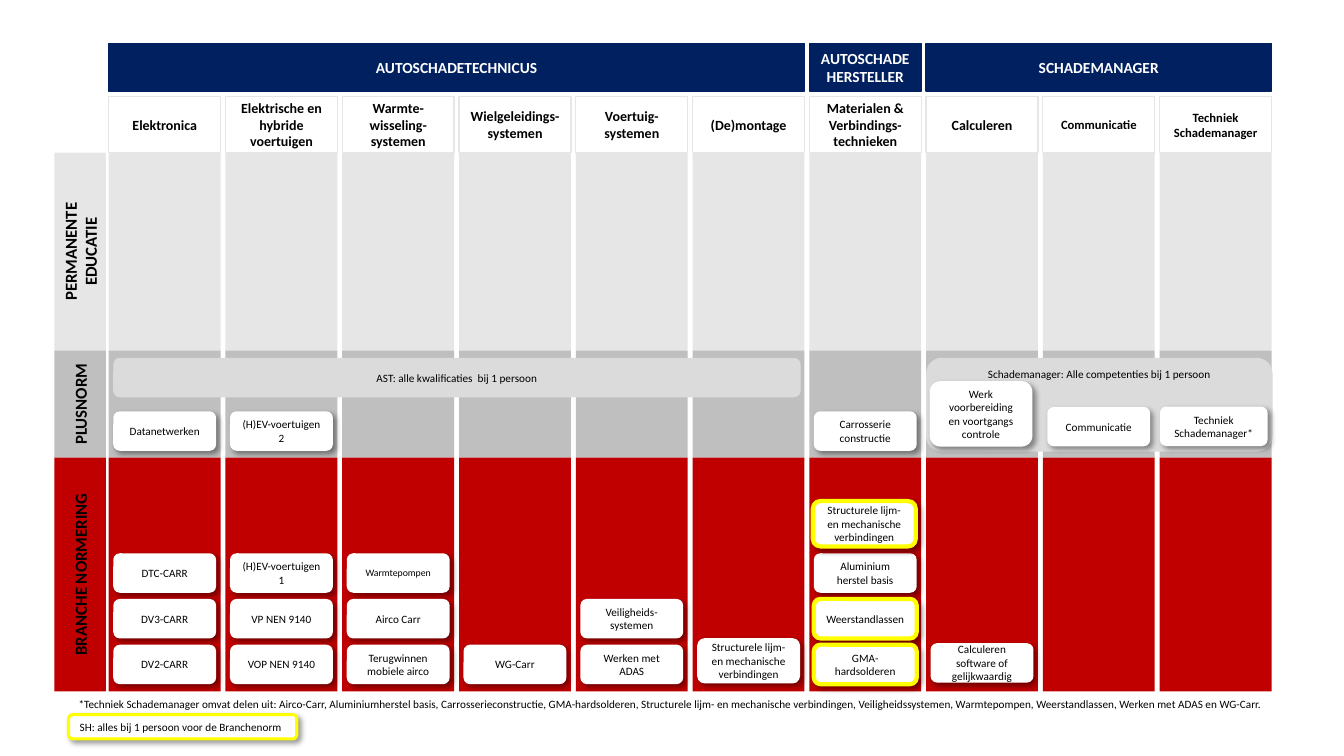
from lxml import etree
from pptx import Presentation
from pptx.dml.color import RGBColor
from pptx.enum.shapes import MSO_SHAPE
from pptx.enum.text import MSO_ANCHOR, PP_ALIGN
from pptx.oxml.ns import qn
from pptx.util import Pt

COLORS = {
    "white": "FFFFFF", "black": "000000", "navy": "002060", "red": "C00000",
    "light": "E6E6E6", "panel": "DBDBDB", "gray": "BFBFBF", "yellow": "FFFF00",
}
COLUMN_LEFT, COLUMN_PITCH, COLUMN_WIDTH = 77.7, 83.4, 80
CARD_INSET, CARD_WIDTH, CARD_HEIGHT = 3.2, 73.5, 28.2


def write_text(shape, text, size, bold=False, color="black",
               align=PP_ALIGN.CENTER, anchor=MSO_ANCHOR.MIDDLE):
    frame = shape.text_frame
    frame.word_wrap = True
    frame.vertical_anchor = anchor
    frame.text = text
    font_format = {"name": "Calibri", "size": Pt(size), "bold": bold}
    for paragraph in frame.paragraphs:
        paragraph.alignment = align
        for name, value in font_format.items():
            setattr(paragraph.font, name, value)
        paragraph.font.color.rgb = RGBColor.from_string(COLORS[color])


def add_box(left, top, width, height, fill, line=None, line_width=1,
            rounded=False, shadow=False):
    kind = MSO_SHAPE.ROUNDED_RECTANGLE if rounded else MSO_SHAPE.RECTANGLE
    shape = slide.shapes.add_shape(kind, Pt(left), Pt(top), Pt(width), Pt(height))
    shape.fill.solid()
    shape.fill.fore_color.rgb = RGBColor.from_string(COLORS[fill])
    if line:
        shape.line.color.rgb = RGBColor.from_string(COLORS[line])
        shape.line.width = Pt(line_width)
    else:
        shape.line.fill.background()
    shape.shadow.inherit = False
    if shadow:
        effects = shape._element.spPr.find(qn("a:effectLst"))
        outer = etree.SubElement(effects, qn("a:outerShdw"), blurRad=str(Pt(4)),
                                 dist=str(Pt(3)), dir="2700000", algn="tl", rotWithShape="0")
        color = etree.SubElement(outer, qn("a:srgbClr"), val=COLORS["black"])
        etree.SubElement(color, qn("a:alpha"), val="40000")
    return shape


presentation = Presentation()
presentation.slide_width, presentation.slide_height = Pt(960), Pt(540)
slide = presentation.slides.add_slide(presentation.slide_layouts[6])
column_lefts = [COLUMN_LEFT + COLUMN_PITCH * index for index in range(10)]

# Level bands with their vertical labels
levels = [
    ("PERMANENTE\nEDUCATIE", 109, 141.6, "light"),
    ("PLUSNORM", 250.4, 76.5, "gray"),
    ("BRANCHE NORMERING", 326.9, 167, "red"),
]
for name, top, height, fill in levels:
    for left in column_lefts:
        add_box(left, top, COLUMN_WIDTH, height, fill)
    label = add_box(38.9, top, 36.7, height, fill)
    write_text(label, name, 12, bold=True)
    label.text_frame._txBody.bodyPr.set("vert", "vert270")

# Roles: name, first column, last column
roles = [
    ("AUTOSCHADETECHNICUS", 0, 5),
    ("AUTOSCHADE\nHERSTELLER", 6, 6),
    ("SCHADEMANAGER", 7, 9),
]
for name, first, last in roles:
    width = COLUMN_PITCH * (last - first) + COLUMN_WIDTH
    header = add_box(column_lefts[first], 31, width, 34, "navy", line="navy")
    write_text(header, name, 11, bold=True, color="white")
    header.text_frame.margin_top = header.text_frame.margin_bottom = 0

subjects = [
    ("Elektronica", 10), ("Elektrische en hybride voertuigen", 10),
    ("Warmte-wisseling-systemen", 10), ("Wielgeleidings-systemen", 10),
    ("Voertuig-systemen", 10), ("(De)montage", 10),
    ("Materialen & Verbindings-technieken", 10), ("Calculeren", 10),
    ("Communicatie", 9), ("Techniek Schademanager", 9),
]
for left, (name, size) in zip(column_lefts, subjects):
    header = add_box(left, 69.1, COLUMN_WIDTH, 39.8, "white", line="light")
    write_text(header, name, size, bold=True)

# Panels for qualifications held by one person
technician_panel = add_box(column_lefts[0] + CARD_INSET, 255.6, 491, CARD_HEIGHT,
                           "panel", rounded=True)
write_text(technician_panel, "AST: alle kwalificaties  bij 1 persoon", 8)
manager_panel = add_box(column_lefts[7], 255.6, 247.5, 67, "panel", rounded=True)
write_text(manager_panel, "Schademanager: Alle competenties bij 1 persoon", 8,
           anchor=MSO_ANCHOR.TOP)

# Cards on the regular rows: column, top, text, font size, outline
PLUS_ROW, UPPER_ROW, MIDDLE_ROW, LOWER_ROW = 293.8, 395.2, 427.8, 460.5
cards = [
    (0, PLUS_ROW, "Datanetwerken", 8, None),
    (0, UPPER_ROW, "DTC-CARR", 8, None),
    (0, MIDDLE_ROW, "DV3-CARR", 8, None),
    (0, LOWER_ROW, "DV2-CARR", 8, None),
    (1, PLUS_ROW, "(H)EV-voertuigen 2", 8, None),
    (1, UPPER_ROW, "(H)EV-voertuigen 1", 8, None),
    (1, MIDDLE_ROW, "VP NEN 9140", 8, None),
    (1, LOWER_ROW, "VOP NEN 9140", 8, None),
    (2, UPPER_ROW, "Warmtepompen", 7, None),
    (2, MIDDLE_ROW, "Airco Carr", 8, None),
    (2, LOWER_ROW, "Terugwinnen mobiele airco", 8, None),
    (3, LOWER_ROW, "WG-Carr", 8, None),
    (4, MIDDLE_ROW, "Veiligheids-systemen", 8, None),
    (4, LOWER_ROW, "Werken met ADAS", 8, None),
    (6, PLUS_ROW, "Carrosserie constructie", 8, None),
    (6, UPPER_ROW, "Aluminium herstel basis", 8, None),
    (6, MIDDLE_ROW, "Weerstandlassen", 8, "yellow"),
    (6, LOWER_ROW, "GMA-hardsolderen", 8, "yellow"),
    (7, 459.4, "Calculeren software of gelijkwaardig", 8, None),
    (8, 290.6, "Communicatie", 8, None),
]
for column, top, text, size, line in cards:
    card = add_box(column_lefts[column] + CARD_INSET, top, CARD_WIDTH, CARD_HEIGHT,
                   "white", line=line, line_width=3, rounded=True, shadow=True)
    write_text(card, text, size)

# Cards with their own size: left, top, width, height, text, outline
joining = "Structurele lijm- en mechanische verbindingen"
special_cards = [
    (498, 455.8, CARD_WIDTH, 32.4, joining, None),
    (580.6, 357.9, CARD_WIDTH, 32.4, joining, "yellow"),
    (664, 272.2, CARD_WIDTH, 46.8, "Werk\nvoorbereiding en voortgangs\ncontrole", None),
    (828.5, 290.4, 77, CARD_HEIGHT, "Techniek Schademanager*", None),
]
for left, top, width, height, text, line in special_cards:
    card = add_box(left, top, width, height, "white", line=line, line_width=3,
                   rounded=True, shadow=True)
    write_text(card, text, 8)

# Footnote and legend
footnote = slide.shapes.add_textbox(Pt(49), Pt(494.6), Pt(876), Pt(17))
write_text(
    footnote,
    "*Techniek Schademanager omvat delen uit: Airco-Carr, Aluminiumherstel basis, "
    "Carrosserieconstructie, GMA-hardsolderen, Structurele lijm- en mechanische "
    "verbindingen, Veiligheidssystemen, Warmtepompen, Weerstandlassen, Werken met "
    "ADAS en WG-Carr.",
    8, align=PP_ALIGN.LEFT, anchor=MSO_ANCHOR.TOP)
legend = add_box(49, 510.5, 163, 17.3, "white", line="yellow", line_width=2.25,
                 rounded=True, shadow=True)
write_text(legend, "SH: alles bij 1 persoon voor de Branchenorm", 8, align=PP_ALIGN.LEFT)

presentation.save("out.pptx")
